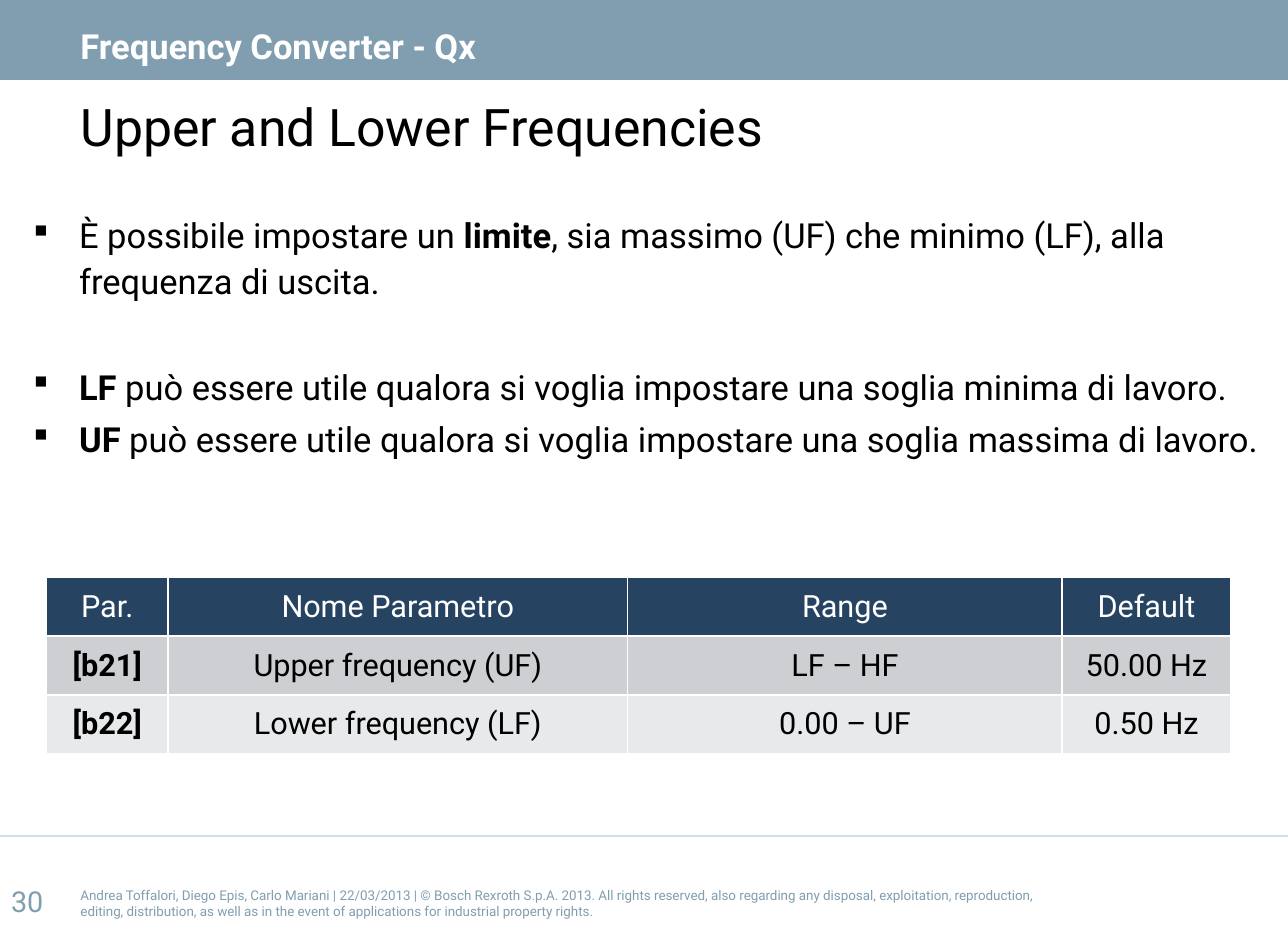
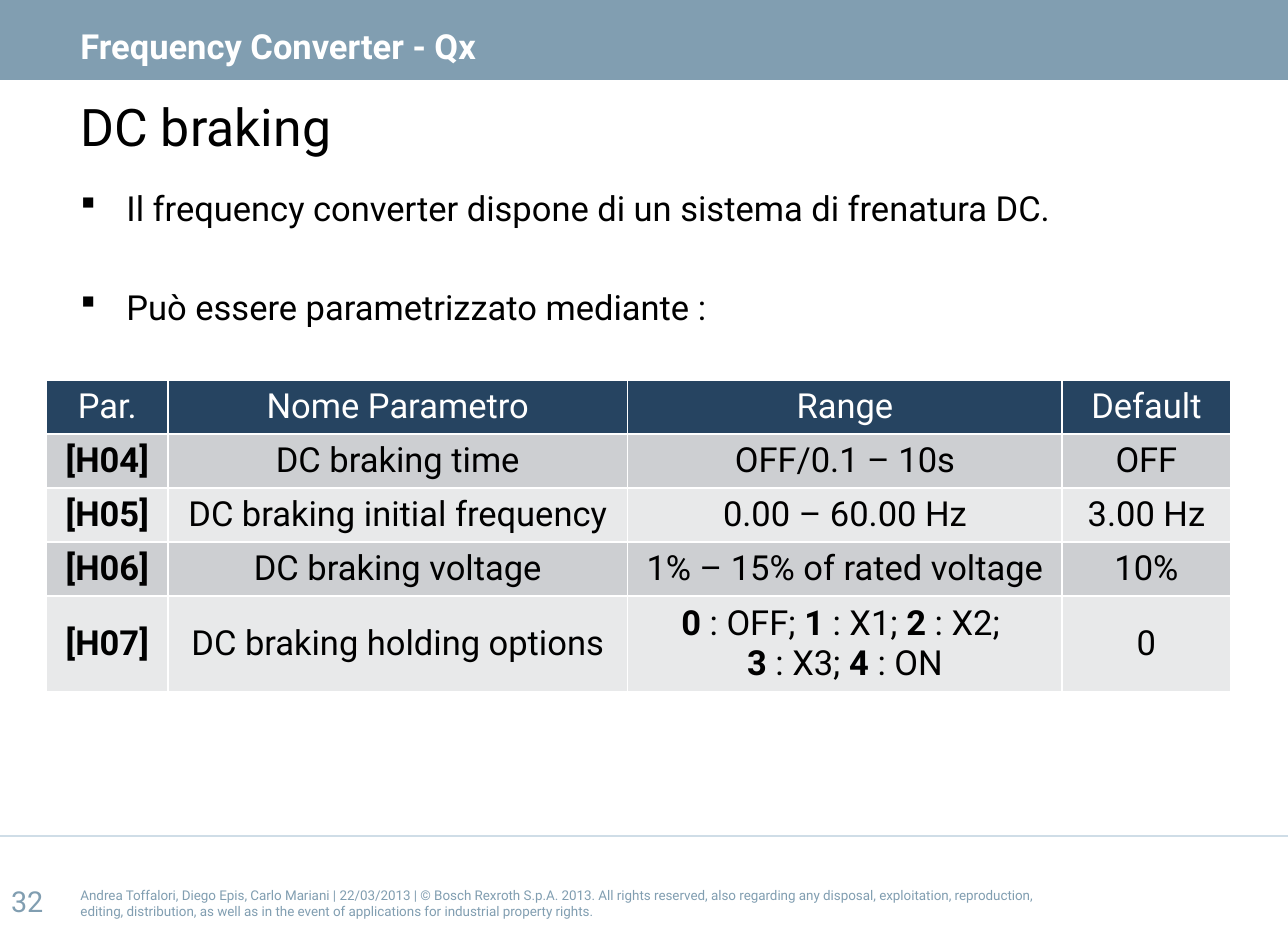
from lxml.etree import SubElement
from pptx import Presentation
from pptx.dml.color import RGBColor
from pptx.enum.shapes import MSO_CONNECTOR, MSO_SHAPE
from pptx.enum.text import MSO_ANCHOR, PP_ALIGN
from pptx.oxml.ns import qn
from pptx.util import Pt

FONT = "Roboto"
STEEL = RGBColor(0x81, 0x9E, 0xB1)
PALE_BLUE = RGBColor(0xCF, 0xDD, 0xE7)
NAVY = RGBColor(0x26, 0x44, 0x61)
DARK_ROW = RGBColor(0xCD, 0xCF, 0xD2)
LIGHT_ROW = RGBColor(0xE8, 0xE9, 0xEA)
WHITE = RGBColor(0xFF, 0xFF, 0xFF)
BLACK = RGBColor(0x00, 0x00, 0x00)

SLIDE_WIDTH, SLIDE_HEIGHT = 672, 486
BAND_HEIGHT = 42
TEXT_LEFT = 42
TABLE_LEFT = 24.3
COLUMN_WIDTHS = [63.4, 239.8, 226.8, 87.8]
CELL_INSET = 3.3
INDENT = 24
BOLD_MARK = "*"
HEADER = ["Par.", "Nome Parametro", "Range", "Default"]
BAND_TITLE = "*Frequency Converter - Qx*"
FOOTER = (
    "Andrea Toffalori, Diego Epis, Carlo Mariani | 22/03/2013 | "
    "© Bosch Rexroth S.p.A. 2013. All rights reserved, also regarding any disposal, "
    "exploitation, reproduction, editing, distribution, as well as in the event of "
    "applications for industrial property rights."
)

SLIDES = [
    {
        "number": "30",
        "title": "Upper and Lower Frequencies",
        "body": (17.3, 104.4, 645, 161),
        "bullets": [
            (0, "È possibile impostare un *limite*, sia massimo (UF) che minimo (LF), "
                "alla frequenza di uscita."),
            (31, "*LF* può essere utile qualora si voglia impostare una soglia minima di lavoro."),
            (3.6, "*UF* può essere utile qualora si voglia impostare una soglia massima di lavoro."),
        ],
        "table_top": 301,
        "table_size": 16,
        "row_heights": [30.7] * 3,
        "rows": [
            ["*[b21]*", "Upper frequency (UF)", "LF – HF", "50.00 Hz"],
            ["*[b22]*", "Lower frequency (LF)", "0.00 – UF", "0.50 Hz"],
        ],
    },
    {
        "number": "32",
        "title": "DC braking",
        "body": (TEXT_LEFT, 90, 576, 105),
        "bullets": [
            (0, "Il frequency converter dispone di un sistema di frenatura DC."),
            (27.8, "Può essere parametrizzato mediante :"),
        ],
        "table_top": 198,
        "table_size": 18,
        "row_heights": [28.2] * 4 + [49],
        "rows": [
            ["*[H04]*", "DC braking time", "OFF/0.1 – 10s", "OFF"],
            ["*[H05]*", "DC braking initial frequency", "0.00 – 60.00 Hz", "3.00 Hz"],
            ["*[H06]*", "DC braking voltage", "1% – 15% of rated voltage", "10%"],
            ["*[H07]*", "DC braking holding options",
             "*0* : OFF; *1* : X1; *2* : X2; \n*3* : X3; *4* : ON", "0"],
        ],
    },
]


def add_runs(para, text, size, color):
    for position, part in enumerate(text.split(BOLD_MARK)):
        if part:
            span = para.add_run()
            span.text = part
            span.font.name = FONT
            span.font.size = Pt(size)
            span.font.bold = position % 2 == 1
            span.font.color.rgb = color


def add_text_frame(page, left, top, width, height, inset=0, anchor=MSO_ANCHOR.TOP):
    box = page.shapes.add_textbox(Pt(left), Pt(top), Pt(width), Pt(height))
    frame = box.text_frame
    frame.word_wrap = True
    frame.margin_left = frame.margin_right = frame.margin_bottom = 0
    frame.margin_top = Pt(inset)
    frame.vertical_anchor = anchor
    return frame


deck = Presentation()
deck.slide_width = Pt(SLIDE_WIDTH)
deck.slide_height = Pt(SLIDE_HEIGHT)

for content in SLIDES:
    page = deck.slides.add_slide(deck.slide_layouts[6])

    band = page.shapes.add_shape(MSO_SHAPE.RECTANGLE, 0, 0, Pt(SLIDE_WIDTH), Pt(BAND_HEIGHT))
    band.shadow.inherit = False
    band.fill.solid()
    band.fill.fore_color.rgb = STEEL
    band.line.fill.background()

    for rule_top, rule_color in [(BAND_HEIGHT, WHITE), (436, PALE_BLUE)]:
        rule = page.shapes.add_connector(
            MSO_CONNECTOR.STRAIGHT, 0, Pt(rule_top), Pt(SLIDE_WIDTH), Pt(rule_top))
        rule.line.color.rgb = rule_color
        rule.line.width = Pt(1)
        SubElement(rule._element.spPr, qn("a:effectLst"))

    number_frame = add_text_frame(page, 5.8, 460.8, 30, 15)
    number_frame.word_wrap = False
    add_runs(number_frame.paragraphs[0], content["number"], 15, STEEL)

    footer_frame = add_text_frame(page, TEXT_LEFT, 456.5, 504, 23, anchor=MSO_ANCHOR.BOTTOM)
    add_runs(footer_frame.paragraphs[0], FOOTER, 7, STEEL)

    band_frame = add_text_frame(page, TEXT_LEFT, 0, 576, 41, 4.3, MSO_ANCHOR.MIDDLE)
    band_frame.paragraphs[0].line_spacing = 1.11
    add_runs(band_frame.paragraphs[0], BAND_TITLE, 18, WHITE)

    title_frame = add_text_frame(page, TEXT_LEFT, BAND_HEIGHT, 600, 48, 0.7)
    title_frame.paragraphs[0].line_spacing = 1.2
    add_runs(title_frame.paragraphs[0], content["title"], 27, BLACK)

    body_frame = add_text_frame(page, *content["body"], inset=5)
    for index, (space_before, text) in enumerate(content["bullets"]):
        para = body_frame.add_paragraph() if index else body_frame.paragraphs[0]
        properties = para._p.get_or_add_pPr()
        properties.set("marL", str(Pt(INDENT)))
        properties.set("indent", str(-Pt(INDENT)))
        SubElement(properties, qn("a:buFont"), typeface="Wingdings", charset="2")
        SubElement(properties, qn("a:buChar"), char="§")
        para.line_spacing = 1.11
        if space_before:
            para.space_before = Pt(space_before)
        add_runs(para, text, 18, BLACK)

    grid = [HEADER] + content["rows"]
    heights = content["row_heights"]
    table = page.shapes.add_table(
        len(grid), len(HEADER), Pt(TABLE_LEFT), Pt(content["table_top"]),
        Pt(sum(COLUMN_WIDTHS)), Pt(sum(heights))).table
    for column, width in zip(table.columns, COLUMN_WIDTHS):
        column.width = Pt(width)
    for row_index, (row, height, texts) in enumerate(zip(table.rows, heights, grid)):
        row.height = Pt(height)
        if row_index == 0:
            fill_color, text_color = NAVY, WHITE
        else:
            fill_color, text_color = (DARK_ROW if row_index % 2 else LIGHT_ROW), BLACK
        for cell, text in zip(row.cells, texts):
            cell.vertical_anchor = MSO_ANCHOR.MIDDLE
            cell.margin_top = cell.margin_bottom = Pt(CELL_INSET)
            for index, line in enumerate(text.split("\n")):
                para = cell.text_frame.add_paragraph() if index else cell.text_frame.paragraphs[0]
                para.alignment = PP_ALIGN.CENTER
                add_runs(para, line, content["table_size"], text_color)
            cell_properties = cell._tc.get_or_add_tcPr()
            for side in ["a:lnL", "a:lnR", "a:lnT", "a:lnB"]:
                border = SubElement(cell_properties, qn(side), w=str(Pt(1)))
                border_fill = SubElement(border, qn("a:solidFill"))
                SubElement(border_fill, qn("a:srgbClr"), val=str(WHITE))
            cell.fill.solid()
            cell.fill.fore_color.rgb = fill_color

deck.save("out.pptx")
